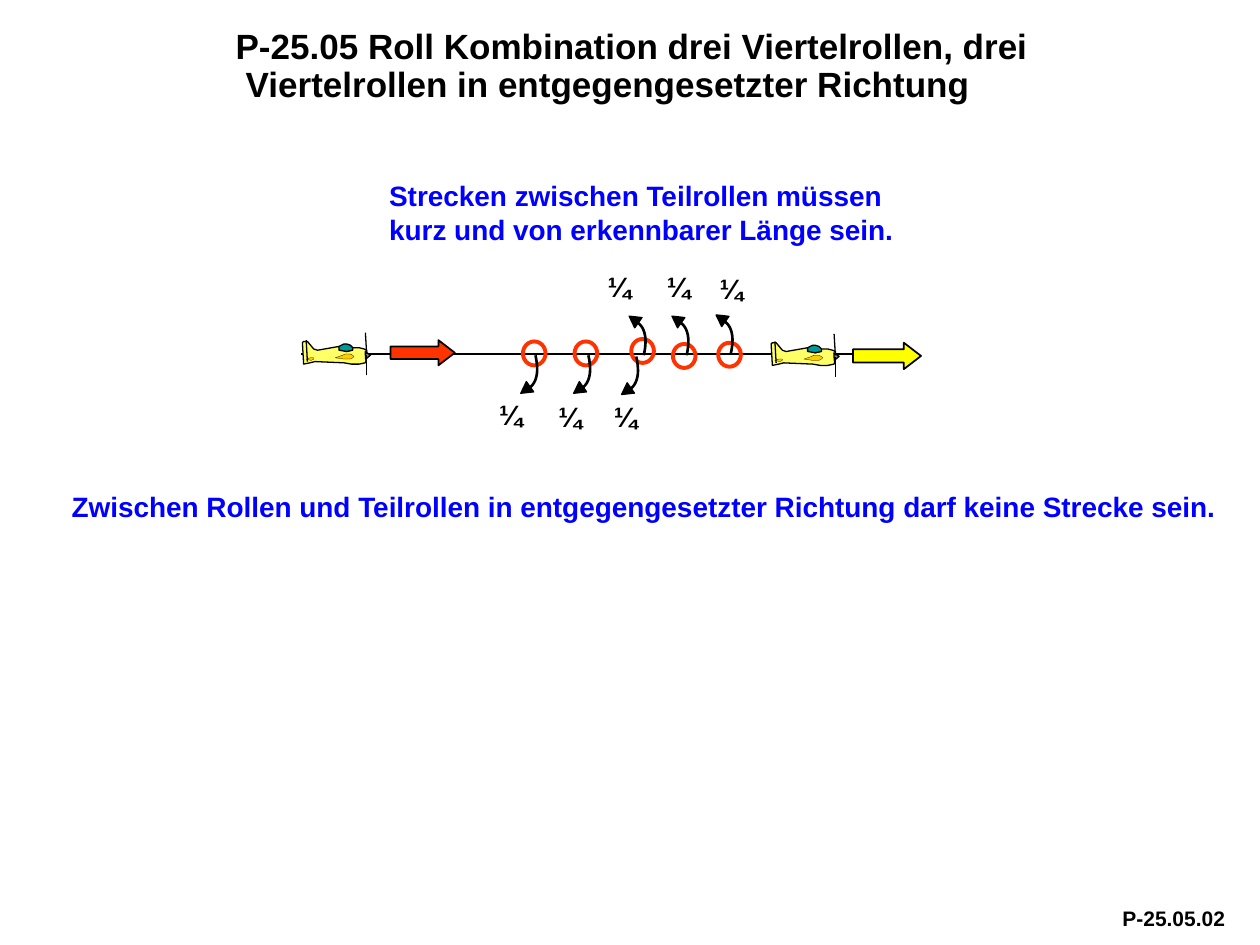
from lxml import etree
from pptx import Presentation
from pptx.dml.color import RGBColor
from pptx.enum.shapes import MSO_CONNECTOR, MSO_SHAPE
from pptx.enum.text import PP_ALIGN
from pptx.oxml.ns import qn
from pptx.shapes.connector import Connector
from pptx.util import Inches, Pt

rgb = RGBColor.from_string
BLACK, BLUE, RED, YELLOW = "000000", "0000FF", "FF3300", "FFFF00"

presentation = Presentation()
presentation.slide_width, presentation.slide_height = Inches(10), Inches(7.5)
slide = presentation.slides.add_slide(presentation.slide_layouts[6])
shapes = slide.shapes


def add_text(text, left, top, width, height, size=16, color=BLACK,
             align=PP_ALIGN.LEFT, line_spacing=None, hanging=0):
    box = shapes.add_textbox(Inches(left), Inches(top), Inches(width), Inches(height))
    box.text_frame.word_wrap = True
    paragraph = box.text_frame.paragraphs[0]
    paragraph.text = text
    paragraph.alignment = align
    paragraph.line_spacing = line_spacing
    if hanging:
        properties = paragraph._p.get_or_add_pPr()
        properties.set("marL", str(Inches(hanging)))
        properties.set("indent", str(-Inches(hanging)))
    font = paragraph.runs[0].font
    font.name, font.size, font.bold = "Arial", Pt(size), True
    font.color.rgb = rgb(color)
    return box


def style(shape, fill=None, line=BLACK, width=0.75):
    """Set fill, line and no shadow; without a fill colour the shape is hollow."""
    shape.line.color.rgb = rgb(line)
    shape.line.width = Pt(width)
    if isinstance(shape, Connector):
        etree.SubElement(shape._element.spPr, qn("a:effectLst"))
        return
    shape.shadow.inherit = False
    if fill:
        shape.fill.solid()
        shape.fill.fore_color.rgb = rgb(fill)
    else:
        shape.fill.background()


# Texts
title = add_text("P-25.05 Roll Kombination drei Viertelrollen, drei "
                 "Viertelrollen in entgegengesetzter Richtung",
                 1.78, 0.19, 7.82, 0.69, size=20, line_spacing=0.9, hanging=0.08)
title.text_frame.margin_left = title.text_frame.margin_right = Inches(0.09)
title.text_frame.margin_top = title.text_frame.margin_bottom = Inches(0.04)
add_text("Strecken zwischen Teilrollen müssen kurz und von erkennbarer Länge sein.",
         2.99, 1.37, 4.54, 0.64, color=BLUE)
add_text("Zwischen Rollen und Teilrollen in entgegengesetzter Richtung "
         "darf keine Strecke sein.", 0.47, 3.84, 9.5, 0.37, color=BLUE)
add_text("P-25.05.02", 8.81, 7.14, 1.03, 0.3, size=12)

# Flight path
flight_path = shapes.add_connector(MSO_CONNECTOR.STRAIGHT, Inches(7.12), Inches(2.81),
                                   Inches(2.39), Inches(2.81))
style(flight_path, width=1)

# Quarter rolls: turn (1 down, -1 up), ring corner, arc start, label corner
QUARTER_ROLLS = [
    (1, 4.15, 2.71, 4.25, 2.82, 3.42, 3.11),
    (1, 4.56, 2.71, 4.67, 2.82, 3.89, 3.12),
    (1, 5.01, 2.69, 5.05, 2.83, 4.33, 3.12),
    (-1, 5.01, 2.69, 5.11, 2.82, 4.28, 2.09),
    (-1, 5.34, 2.73, 5.45, 2.82, 4.75, 2.09),
    (-1, 5.70, 2.72, 5.80, 2.81, 5.17, 2.11),
]
ARC_CONTROLS = [(0, 0), (0.03, 0.13), (0.01, 0.22), (-0.05, 0.26)]
ARC_STEPS = 12

arc = []
for step in range(ARC_STEPS + 1):
    t = step / ARC_STEPS
    weights = [(1 - t) ** 3, 3 * t * (1 - t) ** 2, 3 * t ** 2 * (1 - t), t ** 3]
    arc.append([sum(w * point[axis] for w, point in zip(weights, ARC_CONTROLS))
                for axis in (0, 1)])

ring_corners = dict.fromkeys((roll[1], roll[2]) for roll in QUARTER_ROLLS)
for left, top in ring_corners:
    ring = shapes.add_shape(MSO_SHAPE.OVAL, Inches(left), Inches(top),
                            Inches(0.18), Inches(0.19))
    style(ring, line=RED, width=2.25)

for turn, _, _, x, y, label_left, label_top in QUARTER_ROLLS:
    points = [(Inches(x + dx), Inches(y + turn * dy)) for dx, dy in arc]
    builder = shapes.build_freeform(*points[0])
    builder.add_line_segments(points[1:], close=False)
    style(builder.convert_to_shape(), width=1.5)
    head = shapes.add_shape(MSO_SHAPE.ISOSCELES_TRIANGLE, Inches(x - 0.13),
                            Inches(y + turn * 0.28 - 0.05), Inches(0.1), Inches(0.09))
    head.rotation = 270 - turn * 35.5
    style(head, fill=BLACK)
    add_text("¼", label_left, label_top, 1.27, 0.64, align=PP_ALIGN.CENTER)

# Aeroplanes, in inches from the upper left corner of each
BODY = [(0.40, 0.12), (0.45, 0.12), (0.49, 0.13), (0.51, 0.14), (0.51, 0.20),
        (0.50, 0.24), (0.45, 0.25), (0.39, 0.25), (0.33, 0.24), (0.10, 0.23),
        (0.06, 0.24), (0.01, 0.25), (0, 0.08), (0.01, 0.07), (0.04, 0.07),
        (0.09, 0.13), (0.12, 0.14), (0.29, 0.11), (0.30, 0.13), (0.35, 0.15),
        (0.39, 0.14)]
CANOPY = [(0.29, 0.11), (0.29, 0.14), (0.35, 0.15), (0.40, 0.14), (0.40, 0.12),
          (0.38, 0.10), (0.35, 0.09), (0.33, 0.09)]
WING = [(0.26, 0.20), (0.32, 0.18), (0.34, 0.17), (0.38, 0.17), (0.40, 0.18),
        (0.41, 0.19), (0.40, 0.20), (0.38, 0.21), (0.33, 0.21)]
TAILPLANE = [(0.03, 0.21), (0.07, 0.22), (0.09, 0.21), (0.09, 0.20), (0.06, 0.20)]
OUTLINES = [(BODY, "FFFF66", 0.75), (CANOPY, "009999", 0.75),
            (WING, "FFCC00", 0.13), (TAILPLANE, "FFCC00", 0.13)]
RUDDER_AND_PROPELLER = [(0.04, 0.23, 0.03, 0.06), (0.51, 0.34, 0.51, 0.18),
                        (0.51, 0.17, 0.50, 0)]

for left, top in [(2.40, 2.64), (6.12, 2.65)]:
    plane = shapes.add_group_shape().shapes
    for outline, fill, width in OUTLINES:
        points = [(Inches(left + dx), Inches(top + dy)) for dx, dy in outline]
        builder = plane.build_freeform(*points[0])
        builder.add_line_segments(points[1:], close=True)
        style(builder.convert_to_shape(), fill=fill, width=width)
    spinner = plane.add_shape(MSO_SHAPE.ISOSCELES_TRIANGLE, Inches(left + 0.49),
                              Inches(top + 0.16), Inches(0.06), Inches(0.04))
    spinner.rotation = 87
    style(spinner, fill="808080")
    for x1, y1, x2, y2 in RUDDER_AND_PROPELLER:
        style(plane.add_connector(MSO_CONNECTOR.STRAIGHT,
                                  Inches(left + x1), Inches(top + y1),
                                  Inches(left + x2), Inches(top + y2)))

# Flight direction
for left, top, width, height, fill in [(3.10, 2.70, 0.51, 0.20, RED),
                                       (6.77, 2.72, 0.54, 0.21, YELLOW)]:
    arrow = shapes.add_shape(MSO_SHAPE.RIGHT_ARROW, Inches(left), Inches(top),
                             Inches(width), Inches(height))
    arrow.adjustments[0], arrow.adjustments[1] = 0.5, 0.65
    style(arrow, fill=fill, width=1)

presentation.save("out.pptx")
